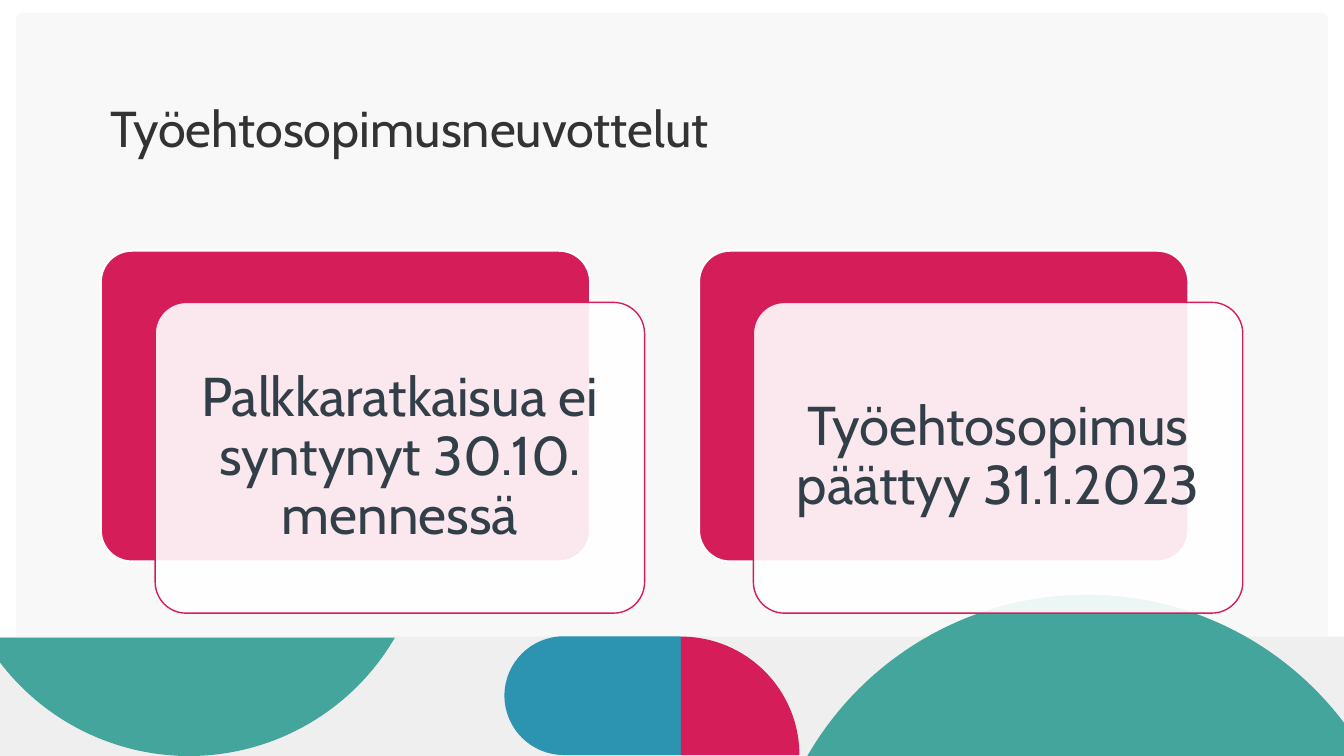
from itertools import pairwise
from math import cos, radians, sin, tan

from lxml.etree import SubElement
from pptx import Presentation
from pptx.dml.color import RGBColor
from pptx.enum.shapes import MSO_SHAPE as Shape
from pptx.enum.text import MSO_ANCHOR as Anchor, PP_ALIGN as Align
from pptx.oxml.ns import qn
from pptx.util import Pt

TEAL, BLUE, RED = "43A59B", "2C93B0", "D51D59"
WHITE, PANEL, BAND = "FFFFFF", "F8F8F8", "EFEFEF"
TITLE_COLOR, CARD_TEXT_COLOR = "333333", "333F48"

TITLE_FORMAT = {"name": "Cabin", "size": Pt(36)}
CARD_FORMAT = {"name": "Cabin", "size": Pt(39)}
TITLE_FRAME = {"word_wrap": True, "vertical_anchor": Anchor.MIDDLE}
CARD_FRAME = TITLE_FRAME | {
    side: Pt(11.5)
    for side in ("margin_left", "margin_top", "margin_right", "margin_bottom")
}

CARD_WIDTH, CARD_HEIGHT = 349.6, 222
CARD_LEFT, CARD_TOP, CARD_PITCH = 72, 179.1, 427.3
CARD_SHIFT_X, CARD_SHIFT_Y = 38.84, 36.9
CARD_TEXTS = (
    "Palkkaratkaisua ei syntynyt 30.10. mennessä",
    "Työehtosopimus päättyy 31.1.2023",
)


def set_attributes(target, values):
    for name, value in values.items():
        setattr(target, name, value)


def set_color(color_format, color):
    color_format.rgb = RGBColor.from_string(color)


def style_shape(shape, fill, line=None, line_width=1, opacity=100):
    shape.shadow.inherit = False
    shape.fill.solid()
    set_color(shape.fill.fore_color, fill)
    if opacity < 100:
        color_element = shape.fill._xPr.find(f".//{qn('a:srgbClr')}")
        SubElement(color_element, qn("a:alpha"), val=str(opacity * 1000))
    if line:
        shape.line.width = Pt(line_width)
        set_color(shape.line.color, line)
    else:
        shape.line.fill.background()


def add_box(slide, kind, box, fill, radius=None, **style):
    shape = slide.shapes.add_shape(kind, *map(Pt, box))
    if radius is not None:
        shape.adjustments[0] = radius
    style_shape(shape, fill, **style)
    return shape


def round_segment(segment, origin, center, radius, start, end):
    handle = radius * 4 / 3 * tan(radians(end - start) / 4)
    segment.tag = qn("a:cubicBezTo")
    for index, (angle, reach) in enumerate(((start, handle), (end, -handle))):
        turn = radians(angle)
        x = center[0] + radius * cos(turn) - reach * sin(turn)
        y = center[1] + radius * sin(turn) + reach * cos(turn)
        control = segment.makeelement(
            qn("a:pt"), x=str(Pt(x) - origin[0]), y=str(Pt(y) - origin[1]))
        segment.insert(index, control)


def add_arc_shape(slide, center, radius, angles, corners, fill):
    arc = [(center[0] + radius * cos(radians(angle)),
            center[1] + radius * sin(radians(angle))) for angle in angles]
    points = [(Pt(x), Pt(y)) for x, y in arc + corners]
    builder = slide.shapes.build_freeform(*points[0])
    builder.add_line_segments(points[1:], close=True)
    shape = builder.convert_to_shape()
    segments = list(shape._element.iter(qn("a:lnTo")))
    for segment, (start, end) in zip(segments, pairwise(angles)):
        round_segment(segment, (shape.left, shape.top), center, radius, start, end)
    style_shape(shape, fill)


def write_text(shape, text, frame_values, font_values, color, **paragraph_values):
    set_attributes(shape.text_frame, frame_values)
    paragraph = shape.text_frame.paragraphs[0]
    set_attributes(paragraph, paragraph_values)
    run = paragraph.add_run()
    run.text = text
    set_attributes(run.font, font_values)
    set_color(run.font.color, color)


def add_background(slide):
    add_box(slide, Shape.ROUNDED_RECTANGLE, (11.3, 9.2, 937.4, 522), PANEL, 0.01)
    add_box(slide, Shape.RECTANGLE, (0, 454.8, 960, 85.2), BAND)
    add_arc_shape(slide, (135.1, 370), 170, (30.2, 90, 142.6), [(0, 455.5)], TEAL)
    add_arc_shape(slide, (402.7, 496.9), 42.4, (90, 180, 270),
                  [(486.4, 454.5), (486.4, 539.3)], BLUE)
    add_arc_shape(slide, (486.4, 539.3), 84.6, (270, 360), [(486.4, 539.3)], RED)
    add_arc_shape(slide, (776.2, 655.2), 230.4, (210, 270, 322.9), [(960, 540)], TEAL)


def add_title(slide, text):
    title = slide.shapes.add_textbox(Pt(72), Pt(19.4), Pt(815.8), Pt(142.6))
    write_text(title, text, TITLE_FRAME, TITLE_FORMAT, TITLE_COLOR)


def add_card(slide, left, text):
    size = (CARD_WIDTH, CARD_HEIGHT)
    add_box(slide, Shape.ROUNDED_RECTANGLE, (left, CARD_TOP, *size), RED, 0.1,
            line=WHITE, line_width=1.5)
    front = add_box(slide, Shape.ROUNDED_RECTANGLE,
                    (left + CARD_SHIFT_X, CARD_TOP + CARD_SHIFT_Y, *size),
                    WHITE, 0.1, line=RED, opacity=90)
    write_text(front, text, CARD_FRAME, CARD_FORMAT, CARD_TEXT_COLOR,
               alignment=Align.CENTER, line_spacing=0.9)


def main():
    presentation = Presentation()
    set_attributes(presentation, {"slide_width": Pt(960), "slide_height": Pt(540)})
    slide = presentation.slides.add_slide(presentation.slide_layouts[6])
    add_background(slide)
    add_title(slide, "Työehtosopimusneuvottelut")
    for index, text in enumerate(CARD_TEXTS):
        add_card(slide, CARD_LEFT + index * CARD_PITCH, text)
    presentation.save("out.pptx")


if __name__ == "__main__":
    main()
